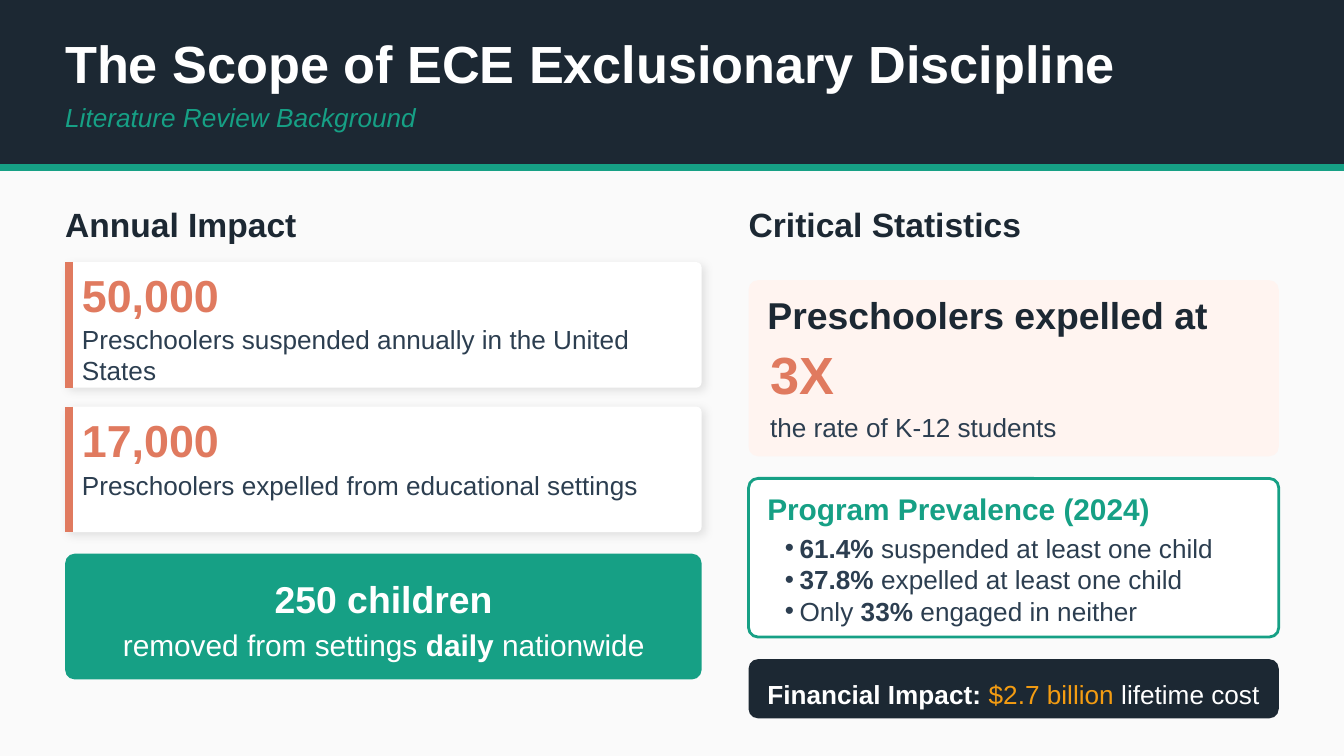
from lxml import etree
from pptx import Presentation
from pptx.dml.color import RGBColor
from pptx.enum import shapes, text
from pptx.oxml.ns import qn
from pptx.util import Pt

PX = 4572  # EMU per px, 200 px to the inch
FONT = "Arial"
NAVY, TEAL, CORAL, SLATE = "1C2833", "16A085", "E07A5F", "2C3E50"
WHITE, PAPER, BLUSH, AMBER, BLACK = "FFFFFF", "FAFAFA", "FFF4F0", "F39C12", "000000"
SLIDE_W, SLIDE_H = 2000, 1125
LEFT_X, LEFT_W = 97, 947
RIGHT_X, RIGHT_W = 1114, 789
CARD_TOP, CARD_PITCH, PANEL_H = 390, 215, 187
TEXT_LEFT, TEXT_RIGHT = LEFT_X + 25, RIGHT_X + 28
BULLET_INDENT = 22

BOLD, PLAIN = {"bold": True}, {"bold": False}

# Content: each paragraph is a list of (words, font changes)
TITLE = [[("The Scope of ECE Exclusionary Discipline", BOLD)]]
SUBTITLE = [[("Literature Review Background", {"italic": True})]]
HEADINGS = [("Annual Impact", LEFT_X, 966, 10), ("Critical Statistics", RIGHT_X, 804, 8)]
CARDS = [
    ("50,000", "Preschoolers suspended annually in the United States", 922, 91),
    ("17,000", "Preschoolers expelled from educational settings", 868, 93),
]
DAILY_COUNT = [[("250 children", BOLD)]]
DAILY_NOTE = [[("removed from settings ", PLAIN), ("daily", BOLD), (" nationwide", PLAIN)]]
EXPULSION_LEAD = [[("Preschoolers expelled at", BOLD)]]
EXPULSION_RATE = [[("3X", BOLD)]]
EXPULSION_NOTE = [[("the rate of K-12 students", PLAIN)]]
PREVALENCE_HEAD = [[("Program Prevalence (2024)", BOLD)]]
PREVALENCE = [
    [("61.4%", BOLD), (" suspended at least one child", PLAIN)],
    [("37.8%", BOLD), (" expelled at least one child", PLAIN)],
    [("Only ", PLAIN), ("33%", BOLD), (" engaged in neither", PLAIN)],
]
COST = [[
    ("Financial Impact: ", BOLD),
    ("$2.7 billion", {"bold": False, "color": AMBER}),
    (" lifetime cost", PLAIN),
]]


def rgb(value):
    return RGBColor.from_string(value)


def emu(*lengths):
    return [length * PX for length in lengths]


def add_bullet(paragraph):
    properties = paragraph._p.get_or_add_pPr()
    properties.set("marL", str(BULLET_INDENT * PX))
    properties.set("indent", str(-BULLET_INDENT * PX))
    etree.SubElement(properties, qn("a:buSzPct"), val="100000")
    etree.SubElement(properties, qn("a:buFont"), typeface=FONT)
    etree.SubElement(properties, qn("a:buChar"), char="•")


def write(shape, paragraphs, size, color, align="LEFT", before=0, after=0,
          bullet=False):
    frame = shape.text_frame
    frame_format = {
        "word_wrap": True, "auto_size": text.MSO_AUTO_SIZE.NONE,
        "vertical_anchor": text.MSO_ANCHOR.TOP,
        "margin_left": BULLET_INDENT * PX if bullet else 0,
        "margin_top": 0, "margin_right": 0, "margin_bottom": 0,
    }
    for name, value in frame_format.items():
        setattr(frame, name, value)
    for index, runs in enumerate(paragraphs):
        paragraph = frame.add_paragraph() if index else frame.paragraphs[0]
        paragraph.alignment = getattr(text.PP_ALIGN, align)
        paragraph.space_before, paragraph.space_after = Pt(before), Pt(after)
        if bullet:
            add_bullet(paragraph)
        for words, changes in runs:
            run = paragraph.add_run()
            run.text = words
            font_format = {"name": FONT, "size": Pt(size), "color": color, **changes}
            run.font.color.rgb = rgb(font_format.pop("color"))
            for name, value in font_format.items():
                setattr(run.font, name, value)


def add_text(slide, box, paragraphs, size, color, **options):
    write(slide.shapes.add_textbox(*emu(*box)), paragraphs, size, color, **options)


def add_panel(slide, box, fill, radius=14, outline=None):
    kind = "ROUNDED_RECTANGLE" if radius else "RECTANGLE"
    shape = slide.shapes.add_shape(getattr(shapes.MSO_SHAPE, kind), *emu(*box))
    if radius:
        shape.adjustments[0] = radius / min(box[2:])
    shape.shadow.inherit = False
    shape.fill.solid()
    shape.fill.fore_color.rgb = rgb(fill)
    if outline:
        shape.line.color.rgb = rgb(outline)
        shape.line.width = Pt(1.5)
    else:
        shape.line.fill.background()
    return shape


def add_soft_shadow(shape):
    effects = shape._element.spPr.find(qn("a:effectLst"))
    shadow = etree.SubElement(
        effects, qn("a:outerShdw"), blurRad=str(Pt(4.5)), dist=str(Pt(2.1)),
        dir=str(45 * 60000), algn="bl", rotWithShape="0")
    color = etree.SubElement(shadow, qn("a:srgbClr"), val=BLACK)
    etree.SubElement(color, qn("a:alpha"), val="10000")


def add_line(slide, ends, color, width):
    line = slide.shapes.add_connector(shapes.MSO_CONNECTOR.STRAIGHT, *emu(*ends))
    line.line.color.rgb = rgb(color)
    line.line.width = Pt(width)
    etree.SubElement(line._element.spPr, qn("a:effectLst"))


def build():
    presentation = Presentation()
    presentation.slide_width, presentation.slide_height = emu(SLIDE_W, SLIDE_H)
    slide = presentation.slides.add_slide(presentation.slide_layouts[5])
    slide.background.fill.solid()
    slide.background.fill.fore_color.rgb = rgb(PAPER)

    # Header band, with the title raised above it
    add_panel(slide, (0, 0, SLIDE_W, 254), NAVY, radius=0)
    add_line(slide, (0, 249, SLIDE_W, 249), TEAL, 3.75)
    title = slide.shapes.title
    title.left, title.top, title.width, title.height = emu(LEFT_X, 47, 1842, 90)
    write(title, TITLE, 28, WHITE)
    title.element.getparent().append(title.element)
    add_text(slide, (LEFT_X, 151, 1842, 46), SUBTITLE, 14, TEAL, before=5)

    # Column headings
    for heading, left, width, after in HEADINGS:
        add_text(slide, (left, 304, width, 58), [[(heading, BOLD)]], 18, NAVY,
                 after=after)

    # Annual impact cards
    for index, (number, note, note_width, note_offset) in enumerate(CARDS):
        top = CARD_TOP + index * CARD_PITCH
        card = add_panel(slide, (LEFT_X, top, LEFT_W, PANEL_H), WHITE, radius=8)
        add_soft_shadow(card)
        add_line(slide, (LEFT_X + 6, top, LEFT_X + 6, top + PANEL_H), CORAL, 4.5)
        add_text(slide, (TEXT_LEFT, top + 9, 868, 78), [[(number, BOLD)]], 24, CORAL)
        add_text(slide, (TEXT_LEFT, top + note_offset, note_width, 40),
                 [[(note, PLAIN)]], 14, SLATE, before=3, after=3)

    # Daily removals
    add_panel(slide, (LEFT_X, 824, LEFT_W, PANEL_H), TEAL)
    add_text(slide, (TEXT_LEFT, 858, 898, 64), DAILY_COUNT, 20, WHITE, align="CENTER")
    add_text(slide, (TEXT_LEFT, 932, 898, 38), DAILY_NOTE, 16, WHITE,
             align="CENTER", before=3, after=3)

    # Expulsion rate
    add_panel(slide, (RIGHT_X, 417, RIGHT_W, 262), BLUSH)
    add_text(slide, (TEXT_RIGHT, 435, 736, 44), EXPULSION_LEAD, 20, NAVY)
    add_text(slide, (TEXT_RIGHT + 4, 509, 736, 90), EXPULSION_RATE, 28, CORAL,
             before=5, after=5)
    add_text(slide, (TEXT_RIGHT + 4, 612, 736, 34), EXPULSION_NOTE, 14, SLATE)

    # Program prevalence
    add_panel(slide, (RIGHT_X, 712, RIGHT_W, 236), WHITE, outline=TEAL)
    add_text(slide, (TEXT_RIGHT, 730, 728, 44), PREVALENCE_HEAD, 16, TEAL, after=6)
    add_text(slide, (TEXT_RIGHT + 4, 792, 714, 100), PREVALENCE, 14, SLATE, bullet=True)

    # Financial impact
    add_panel(slide, (RIGHT_X, 981, RIGHT_W, 88), NAVY)
    add_text(slide, (TEXT_RIGHT, 1009, 748, 34), COST, 14, WHITE)

    presentation.save("out.pptx")


if __name__ == "__main__":
    build()
